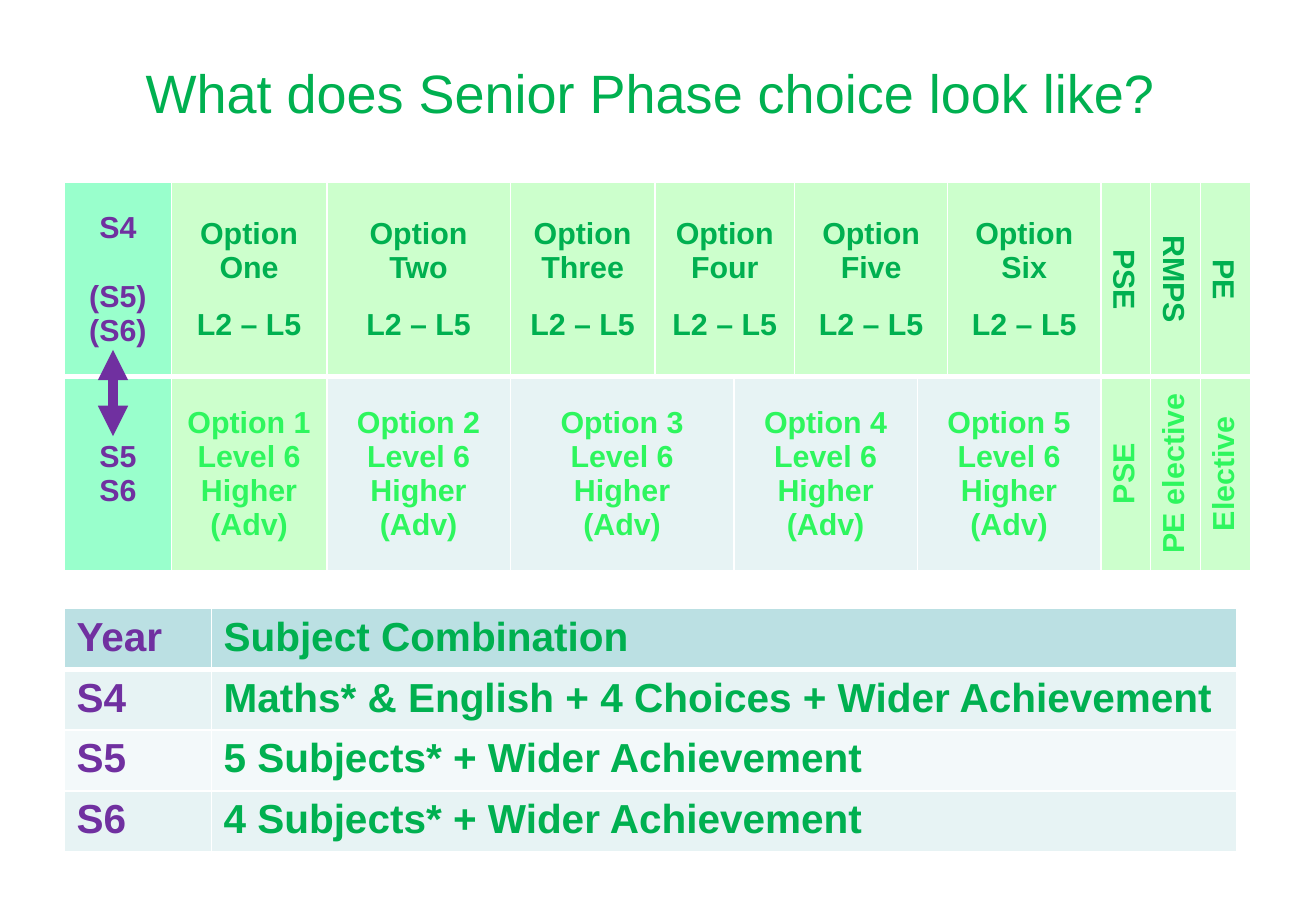
import pptx
import pptx.dml.color
import pptx.enum.shapes
import pptx.enum.text
import pptx.oxml
import pptx.oxml.ns
import pptx.util

EMU_PER_PX = 9144
GREEN, BRIGHT, PURPLE, WHITE = "00B050", "2EF65E", "7030A0", "FFFFFF"
MINT, PALE_GREEN, TEAL, PALE_TEAL, FAINT_TEAL = "99FFCC", "CCFFCC", "BBE0E3", "E7F3F4", "F3F9FA"
CENTER = pptx.enum.text.PP_ALIGN.CENTER
LEFT = pptx.enum.text.PP_ALIGN.LEFT
MIDDLE = pptx.enum.text.MSO_ANCHOR.MIDDLE
TOP = pptx.enum.text.MSO_ANCHOR.TOP
COLUMNS = [88, 128, 151, 119, 65, 50, 101, 25, 126, 41, 41, 41]


def px(length):
    return pptx.util.Emu(length * EMU_PER_PX)


def color(value):
    return pptx.dml.color.RGBColor.from_string(value)


def write(frame, text, size=18, ink=GREEN, bold=True, align=LEFT, gaps=None):
    for index, line in enumerate(text.split("\n")):
        paragraph = frame.paragraphs[0] if index == 0 else frame.add_paragraph()
        paragraph.alignment = align
        if gaps and index in gaps:
            paragraph.space_before = pptx.util.Pt(gaps[index])
        run = paragraph.add_run()
        run.text = line
        run.font.name = "Arial"
        run.font.size = pptx.util.Pt(size)
        run.font.bold = bold
        run.font.color.rgb = color(ink)


def set_borders(cell, bottom):
    properties = cell._tc.get_or_add_tcPr()
    for side, points in (("L", 1), ("R", 1), ("T", 1), ("B", bottom)):
        properties.append(pptx.oxml.parse_xml(
            f'<a:ln{side} {pptx.oxml.ns.nsdecls("a")} w="{pptx.util.Pt(points)}">'
            f'<a:solidFill><a:srgbClr val="{WHITE}"/></a:solidFill></a:ln{side}>'))


def add_grid(slide, box, widths, row_count):
    left, top, width, height = box
    table = slide.shapes.add_table(
        row_count, len(widths), px(left), px(top), px(width), px(height)).table
    table.first_row = False
    table.horz_banding = False
    for column, column_width in zip(table.columns, widths):
        column.width = px(column_width)
    for index, row in enumerate(table.rows):
        row.height = px(height // row_count)
        for cell in row.cells:
            set_borders(cell, 3 if index == 0 else 1)
    return table


def fill_cell(cell, text, fill, anchor=TOP, direction=None, **text_format):
    cell.fill.solid()
    cell.fill.fore_color.rgb = color(fill)
    cell.vertical_anchor = anchor
    if direction:
        cell._tc.get_or_add_tcPr().set("vert", direction)
    write(cell.text_frame, text, **text_format)


def add_title(slide, box):
    frame = slide.shapes.add_textbox(*map(px, box)).text_frame
    frame.word_wrap = True
    frame.auto_size = pptx.enum.text.MSO_AUTO_SIZE.SHAPE_TO_FIT_TEXT
    write(frame, "What does Senior Phase choice look like?", size=32, bold=False)


def add_options(slide, box):
    table = add_grid(slide, box, COLUMNS, 2)
    for row, first in ((0, 4), (0, 6), (1, 3), (1, 5), (1, 7)):
        table.cell(row, first).merge(table.cell(row, first + 1))

    fill_cell(table.cell(0, 0), "S4\n(S5)\n(S6)", MINT, MIDDLE,
              ink=PURPLE, align=CENTER, gaps={1: 20.7})
    fill_cell(table.cell(1, 0), "S5\nS6", MINT, MIDDLE, ink=PURPLE, align=CENTER)

    names = ("One", "Two", "Three", "Four", "Five", "Six")
    for column, name in zip((1, 2, 3, 4, 6, 8), names):
        fill_cell(table.cell(0, column), f"Option\n{name}\nL2 – L5", PALE_GREEN, MIDDLE,
                  align=CENTER, gaps={2: 13.8})
    for number, column in enumerate((1, 2, 3, 5, 7), 1):
        fill_cell(table.cell(1, column), f"Option {number}\nLevel 6\nHigher\n(Adv)",
                  PALE_GREEN if number == 1 else PALE_TEAL, MIDDLE, ink=BRIGHT, align=CENTER)

    extras = (("PSE", "PSE", MIDDLE), ("RMPS", "PE elective", TOP), ("PE", "Elective", TOP))
    for column, (upper, lower, anchor) in enumerate(extras, 9):
        fill_cell(table.cell(0, column), upper, PALE_GREEN, MIDDLE, "vert", align=CENTER)
        fill_cell(table.cell(1, column), lower, PALE_GREEN, anchor, "vert270",
                  ink=BRIGHT, align=CENTER)


def add_combinations(slide, box):
    rows = (
        ("Year", "Subject Combination", TEAL),
        ("S4", "Maths* & English + 4 Choices + Wider Achievement", PALE_TEAL),
        ("S5", "5 Subjects* + Wider Achievement", FAINT_TEAL),
        ("S6", "4 Subjects* + Wider Achievement", PALE_TEAL),
    )
    table = add_grid(slide, box, [121, box[2] - 121], len(rows))
    for index, (year, subjects, fill) in enumerate(rows):
        fill_cell(table.cell(index, 0), year, fill, size=24, ink=PURPLE)
        fill_cell(table.cell(index, 1), subjects, fill, size=24)


def add_year_arrow(slide, box):
    left, top, width, height = box
    arrow = slide.shapes.add_connector(
        pptx.enum.shapes.MSO_CONNECTOR.STRAIGHT,
        px(left), px(top), px(left + width), px(top + height))
    arrow.line.color.rgb = color(PURPLE)
    arrow.line.width = pptx.util.Pt(6)
    line = arrow.line._get_or_add_ln()
    for end in ("headEnd", "tailEnd"):
        line.append(pptx.oxml.parse_xml(
            f'<a:{end} {pptx.oxml.ns.nsdecls("a")} type="triangle"/>'))
    arrow._element.spPr.append(pptx.oxml.parse_xml(
        f'<a:effectLst {pptx.oxml.ns.nsdecls("a")}/>'))


def main():
    presentation = pptx.Presentation()
    presentation.slide_width = px(1083)
    presentation.slide_height = px(750)
    slide = presentation.slides.add_slide(presentation.slide_layouts[6])
    add_title(slide, (110, 44, 862, 64))
    add_options(slide, (53, 150, sum(COLUMNS), 320))
    add_combinations(slide, (53, 501, 965, 200))
    add_year_arrow(slide, (93, 288, 0, 71))
    presentation.save("out.pptx")


if __name__ == "__main__":
    main()
